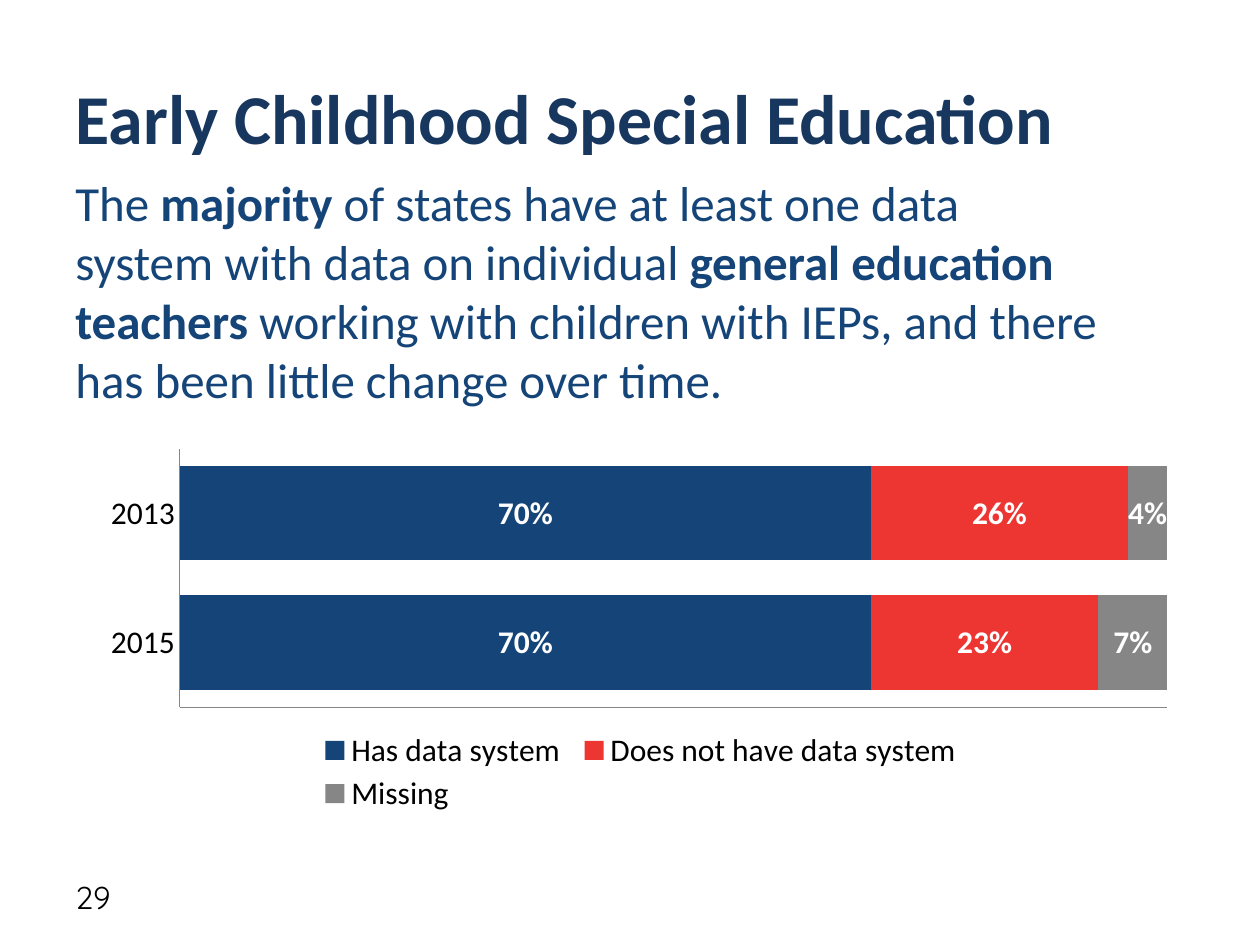
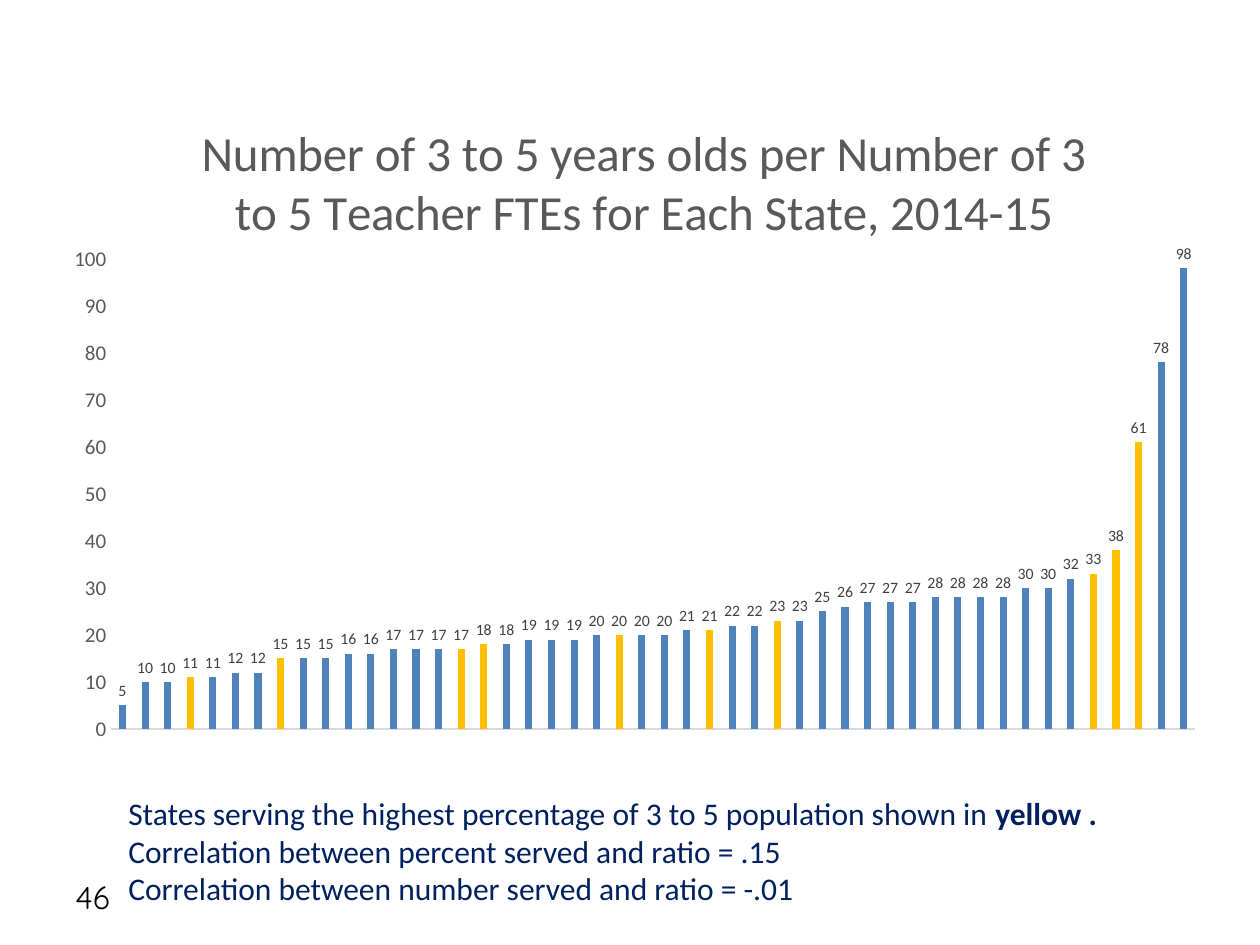
"""Build two slides on early childhood special education data."""
from dataclasses import dataclass
from typing import Any

from pptx import Presentation
from pptx import util as u
from pptx.chart import data as chart_data
from pptx.dml import color as dml
from pptx.enum import chart as ch, text as tx
from pptx.oxml import ns, xmlchemy

PX = u.Inches(1) // 100
COLORS = {
    "title": "17375E", "statement": "154578", "note": "002060", "text": "000000",
    "white": "FFFFFF", "has": "154578", "lacks": "ED3532", "missing": "868687",
    "axis": "868686", "state": "4F81BD", "highest": "FFC000",
    "chart_text": "595959", "label": "404040", "baseline": "D9D9D9",
}


@dataclass(frozen=True)
class Box:
    left: int
    top: int
    width: int
    height: int

    def emu(self) -> tuple[int, ...]:
        return tuple(px * PX for px in (self.left, self.top, self.width, self.height))


@dataclass(frozen=True)
class Style:
    size: int
    color: str
    bold: bool = False
    face: str = "Calibri"


@dataclass(frozen=True)
class Part:
    words: str
    bold: bool = False


@dataclass(frozen=True)
class Layout:
    x: float
    y: float
    w: float | None = None
    h: float | None = None


@dataclass(frozen=True)
class Group:
    name: str
    color: str
    shares: tuple[float, ...]


TITLE = Style(40, "title", True)
STATEMENT = Style(28, "statement")
NOTE = Style(18, "note")
NUMBER = Style(18, "text", face="Quicksand")
NUMBER_BOX = Box(50, 692, 233, 40)
FRAME = {"word_wrap": True, "auto_size": tx.MSO_AUTO_SIZE.NONE}

GROUPS = (
    Group("Has data system", "has", (0.7, 0.7)),
    Group("Does not have data system", "lacks", (0.23, 0.26)),
    Group("Missing", "missing", (0.07, 0.04)),
)
RATIOS = (
    5, 10, 10, 11, 11, 12, 12, 15, 15, 15, 16, 16, 17, 17, 17, 17,
    18, 18, 19, 19, 19, 20, 20, 20, 20, 21, 21, 22, 22, 23, 23, 25,
    26, 27, 27, 27, 28, 28, 28, 28, 30, 30, 32, 33, 38, 61, 78, 98,
)
HIGHEST_SERVING = (3, 7, 15, 16, 22, 26, 29, 43, 44, 45)


def assign(target: Any, values: dict[str, Any]) -> None:
    for name, value in values.items():
        setattr(target, name, value)


def rgb(name: str) -> dml.RGBColor:
    return dml.RGBColor.from_string(COLORS[name])


def set_font(font: Any, style: Style, bold: bool = False) -> None:
    assign(font, {"name": style.face, "size": u.Pt(style.size),
                  "bold": style.bold or bold})
    font.color.rgb = rgb(style.color)


def fill(format_: Any, color: str) -> None:
    format_.fill.solid()
    format_.fill.fore_color.rgb = rgb(color)


def write(frame: Any, lines: list[list[Part]], style: Style) -> None:
    for index, parts in enumerate(lines):
        paragraph = frame.add_paragraph() if index else frame.paragraphs[0]
        paragraph.alignment = tx.PP_ALIGN.LEFT
        for part in parts:
            run = paragraph.add_run()
            run.text = part.words
            set_font(run.font, style, part.bold)


def add_text(slide: Any, box: Box, lines: list[list[Part]], style: Style,
             anchor: Any = tx.MSO_ANCHOR.TOP) -> None:
    frame = slide.shapes.add_textbox(*box.emu()).text_frame
    assign(frame, FRAME | {"vertical_anchor": anchor})
    write(frame, lines, style)


def add_number(slide: Any, number: int) -> None:
    add_text(slide, NUMBER_BOX, [[Part(str(number))]], NUMBER, tx.MSO_ANCHOR.MIDDLE)


def add_title(slide: Any, words: str) -> None:
    title = slide.shapes.title
    left, top, width, height = Box(50, 30, 900, 125).emu()
    assign(title, {"left": left, "top": top, "width": width, "height": height})
    assign(title.text_frame, FRAME | {"vertical_anchor": tx.MSO_ANCHOR.MIDDLE})
    write(title.text_frame, [[Part(words)]], TITLE)


def place(element: Any, layout: Layout, inner: bool = False) -> None:
    holder = element.find(ns.qn("c:layout"))
    if holder is None:
        holder = xmlchemy.OxmlElement("c:layout")
        element.insert(0, holder)
    manual = xmlchemy.OxmlElement("c:manualLayout")
    holder.append(manual)
    settings = {"layoutTarget": "inner" if inner else None,
                "xMode": "edge", "yMode": "edge",
                "x": layout.x, "y": layout.y, "w": layout.w, "h": layout.h}
    for tag, value in settings.items():
        if value is not None:
            child = xmlchemy.OxmlElement(f"c:{tag}")
            child.set("val", str(value))
            manual.append(child)


def add_bars(slide: Any, kind: Any, box: Box, data: Any, plot_layout: Layout,
             style: Style, spacing: dict[str, int]) -> Any:
    chart = slide.shapes.add_chart(kind, *box.emu(), data).chart
    set_font(chart.font, style)
    assign(chart.plots[0], {"vary_by_categories": False} | spacing)
    for axis in (chart.category_axis, chart.value_axis):
        assign(axis, {"has_major_gridlines": False,
                      "major_tick_mark": ch.XL_TICK_MARK.NONE,
                      "minor_tick_mark": ch.XL_TICK_MARK.NONE})
    place(chart.plots[0]._element.getparent(), plot_layout, inner=True)
    return chart


def add_labels(series: Any, style: Style, number_format: str, position: Any) -> None:
    labels = series.data_labels
    assign(labels, {"show_value": True, "number_format": number_format,
                    "number_format_is_linked": False, "position": position})
    set_font(labels.font, style)


def set_axis_line(axis: Any, color: str) -> None:
    axis.format.line.color.rgb = rgb(color)
    axis.format.line.width = u.Pt(0.75)


def build_data_systems(deck: Any) -> None:
    slide = deck.slides.add_slide(deck.slide_layouts[5])
    add_title(slide, "Early Childhood Special Education")
    add_text(slide, Box(50, 132, 833, 199), [[
        Part("The "), Part("majority", True),
        Part(" of states have at least one data system with data on individual "),
        Part("general education teachers ", True),
        Part("working with children with IEPs, and there has been little change over time."),
    ]], STATEMENT)
    data = chart_data.CategoryChartData(number_format="0%")
    data.categories = ["2015", "2013"]
    for group in GROUPS:
        data.add_series(group.name, group.shares)
    chart = add_bars(slide, ch.XL_CHART_TYPE.BAR_STACKED, Box(73, 350, 871, 302), data,
                     Layout(0.08, 0.02, 0.9, 0.68), Style(18, "text"),
                     {"gap_width": 37, "overlap": 100})
    assign(chart.value_axis, {"minimum_scale": 0, "maximum_scale": 1, "major_unit": 0.2,
                              "tick_label_position": ch.XL_TICK_LABEL_POSITION.NONE})
    for axis in (chart.category_axis, chart.value_axis):
        set_axis_line(axis, "axis")
    for group, series in zip(GROUPS, chart.plots[0].series):
        fill(series.format, group.color)
        add_labels(series, Style(18, "white", True), "0%", ch.XL_LABEL_POSITION.CENTER)
    chart.has_legend = True
    assign(chart.legend, {"position": ch.XL_LEGEND_POSITION.BOTTOM,
                          "include_in_layout": False})
    set_font(chart.legend.font, Style(18, "text"))
    place(chart.legend._element, Layout(0.2, 0.75, 0.6, 0.24))
    add_number(slide, 29)


def build_teacher_ratios(deck: Any) -> None:
    slide = deck.slides.add_slide(deck.slide_layouts[6])
    data = chart_data.CategoryChartData(number_format="0")
    data.categories = [str(state) for state in range(1, len(RATIOS) + 1)]
    data.add_series("Series 1", RATIOS)
    chart = add_bars(slide, ch.XL_CHART_TYPE.COLUMN_CLUSTERED, Box(42, 67, 925, 533), data,
                     Layout(0.05, 0.26, 0.93, 0.7), Style(10, "text"),
                     {"gap_width": 219, "overlap": -27})
    chart.has_legend = False
    chart.has_title = True
    heading = chart.chart_title.text_frame
    heading.text = ("Number of 3 to 5 years olds per Number of 3 "
                    "to 5 Teacher FTEs for Each State, 2014-15")
    set_font(heading.paragraphs[0].runs[0].font, Style(28, "chart_text"))
    place(chart.chart_title._element, Layout(0.12, 0.04))
    chart.category_axis.tick_label_position = ch.XL_TICK_LABEL_POSITION.NONE
    set_axis_line(chart.category_axis, "baseline")
    assign(chart.value_axis, {"minimum_scale": 0, "maximum_scale": 100, "major_unit": 10})
    set_font(chart.value_axis.tick_labels.font, Style(12, "chart_text"))
    chart.value_axis.format.line.fill.background()
    ratios = chart.plots[0].series[0]
    fill(ratios.format, "state")
    for state in HIGHEST_SERVING:
        fill(ratios.points[state].format, "highest")
    add_labels(ratios, Style(9, "label"), "0", ch.XL_LABEL_POSITION.OUTSIDE_END)
    add_text(slide, Box(92, 625, 804, 101), [
        [Part("States serving the highest percentage of 3 to 5 population shown in "),
         Part("yellow .", True)],
        [Part("Correlation between percent served and ratio = .15")],
        [Part("Correlation between number served and ratio = -.01")],
    ], NOTE)
    add_number(slide, 46)


def main() -> None:
    deck = Presentation()
    assign(deck, {"slide_width": 1000 * PX, "slide_height": 750 * PX})
    build_data_systems(deck)
    build_teacher_ratios(deck)
    deck.save("out.pptx")


if __name__ == "__main__":
    main()
